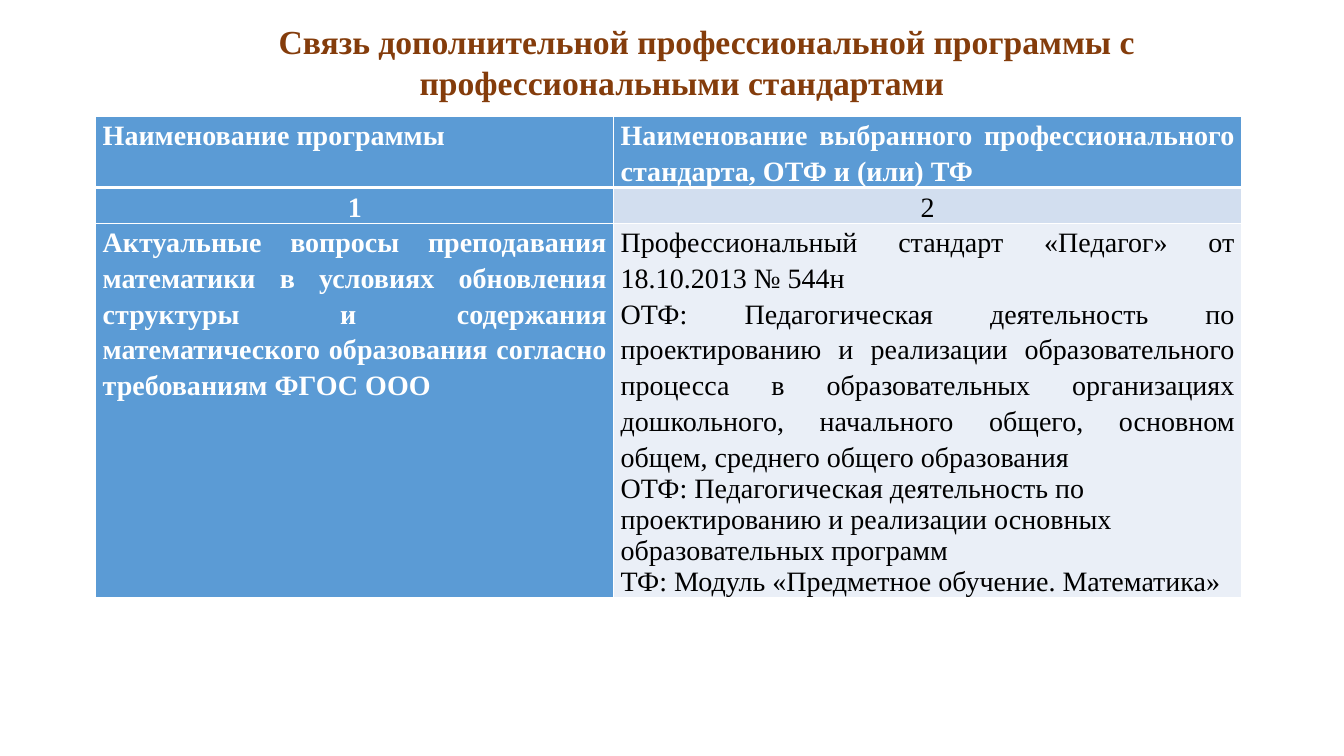
from dataclasses import dataclass

from lxml import etree
from pptx import Presentation
from pptx.dml.color import RGBColor
from pptx.enum.text import MSO_AUTO_SIZE, PP_ALIGN
from pptx.oxml.ns import qn
from pptx.util import Pt

CENTER = PP_ALIGN.CENTER
JUSTIFY = PP_ALIGN.JUSTIFY
LEFT = PP_ALIGN.LEFT
GROW_TO_TEXT = MSO_AUTO_SIZE.SHAPE_TO_FIT_TEXT

FONT = "Times New Roman"
COLORS = {
    "title": "843C0B",
    "heading": "5B9BD5",
    "band": "D2DEEF",
    "pale": "EAEFF7",
    "white": "FFFFFF",
    "black": "000000",
}
COLUMN_WIDTHS = (370, 448.6)
ROW_HEIGHTS = (51, 25.5, 267)


@dataclass
class Line:
    text: str
    alignment: PP_ALIGN = JUSTIFY
    spacing: float = 1.15


@dataclass
class Cell:
    lines: list[Line]
    fill: str = "heading"
    color: str = "white"
    bold: bool = True
    bottom_border: float = 1


ROWS = [
    [
        Cell([Line("Наименование программы")], bottom_border=3),
        Cell([Line("Наименование выбранного профессионального стандарта, "
                   "ОТФ и (или) ТФ")], bottom_border=3),
    ],
    [
        Cell([Line("1", CENTER)]),
        Cell([Line("2", CENTER)], "band", "black", False),
    ],
    [
        Cell([Line("Актуальные вопросы преподавания математики в условиях "
                   "обновления структуры и содержания математического "
                   "образования согласно требованиям ФГОС ООО")]),
        Cell([
            Line("Профессиональный стандарт «Педагог» от 18.10.2013 № 544н"),
            Line("ОТФ: Педагогическая деятельность по проектированию и "
                 "реализации образовательного процесса в образовательных "
                 "организациях дошкольного, начального общего, основном общем, "
                 "среднего общего образования"),
            Line("ОТФ: Педагогическая деятельность по проектированию и "
                 "реализации основных образовательных программ", LEFT, 1),
            Line("ТФ: Модуль «Предметное обучение. Математика»", LEFT, 1),
        ], "pale", "black", False),
    ],
]


def style_font(paragraph, size: float, color: str, bold: bool) -> None:
    font = paragraph.font
    font.name = FONT
    font.size = Pt(size)
    font.bold = bold
    font.color.rgb = RGBColor.from_string(COLORS[color])


def add_borders(table_cell, top: float, bottom: float) -> None:
    properties = table_cell._tc.get_or_add_tcPr()
    borders = (("a:lnL", 1), ("a:lnR", 1), ("a:lnT", top), ("a:lnB", bottom))
    for position, (tag, width) in enumerate(borders):
        border = etree.Element(qn(tag), w=str(Pt(width)))
        fill = etree.SubElement(border, qn("a:solidFill"))
        etree.SubElement(fill, qn("a:srgbClr"), val=COLORS["white"])
        properties.insert(position, border)


def fill_cell(table_cell, cell: Cell, top_border: float) -> None:
    table_cell.margin_left = table_cell.margin_right = Pt(5)
    table_cell.margin_top = table_cell.margin_bottom = Pt(0)
    table_cell.fill.solid()
    table_cell.fill.fore_color.rgb = RGBColor.from_string(COLORS[cell.fill])
    add_borders(table_cell, top_border, cell.bottom_border)
    frame = table_cell.text_frame
    for index, line in enumerate(cell.lines):
        paragraph = frame.add_paragraph() if index else frame.paragraphs[0]
        paragraph.text = line.text
        paragraph.alignment = line.alignment
        paragraph.line_spacing = line.spacing
        style_font(paragraph, 20, cell.color, cell.bold)


def add_standards_table(slide) -> None:
    table = slide.shapes.add_table(
        len(ROWS), len(COLUMN_WIDTHS), Pt(68.4), Pt(82.8),
        Pt(sum(COLUMN_WIDTHS)), Pt(sum(ROW_HEIGHTS))).table
    for column, width in zip(table.columns, COLUMN_WIDTHS):
        column.width = Pt(width)
    for row, height in zip(table.rows, ROW_HEIGHTS):
        row.height = Pt(height)
    for row_index, cells in enumerate(ROWS):
        for column_index, cell in enumerate(cells):
            above = ROWS[row_index - 1][column_index] if row_index else None
            fill_cell(table.cell(row_index, column_index), cell,
                      above.bottom_border if above else 1)


def add_title(slide) -> None:
    shape = slide.shapes.add_textbox(Pt(39.6), Pt(11.5), Pt(895), Pt(94.3))
    frame = shape.text_frame
    frame.word_wrap = True
    frame.auto_size = GROW_TO_TEXT
    paragraph = frame.paragraphs[0]
    paragraph.text = ("Связь дополнительной профессиональной программы "
                      "с профессиональными стандартами")
    paragraph.alignment = CENTER
    paragraph._p.get_or_add_pPr().set("indent", str(Pt(35.4)))
    style_font(paragraph, 24, "title", True)


def main() -> None:
    presentation = Presentation()
    presentation.slide_width = Pt(960)
    presentation.slide_height = Pt(540)
    slide = presentation.slides.add_slide(presentation.slide_layouts[6])

    # Table of the programme and its standards
    add_standards_table(slide)

    # Title above the table
    add_title(slide)

    presentation.save("out.pptx")


if __name__ == "__main__":
    main()
